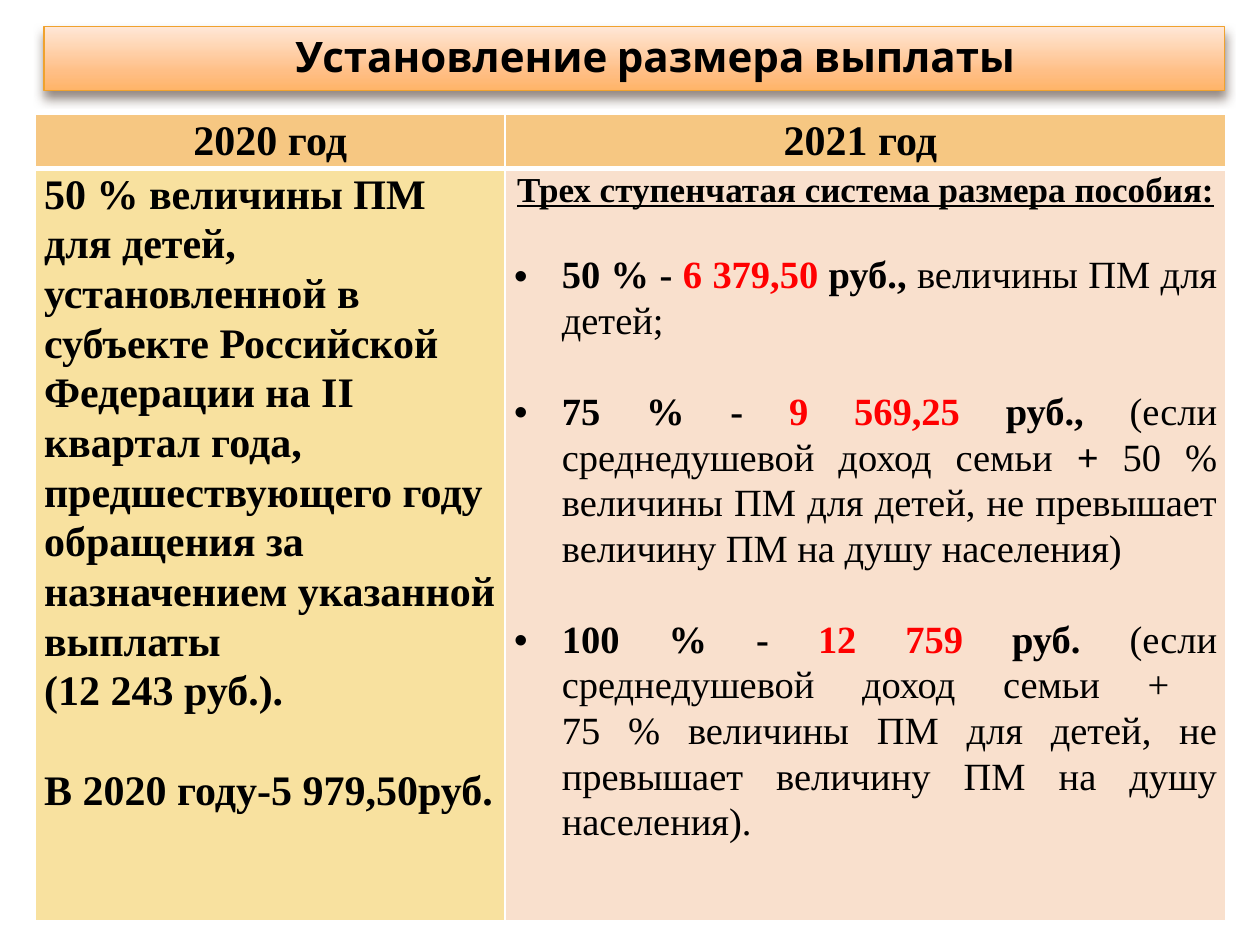
from lxml import etree
from pptx import Presentation
from pptx.dml.color import RGBColor
from pptx.enum.shapes import MSO_SHAPE
from pptx.enum.text import MSO_ANCHOR, PP_ALIGN
from pptx.oxml import parse_xml
from pptx.oxml.ns import nsdecls, qn
from pptx.util import Inches, Pt

RECTANGLE = MSO_SHAPE.RECTANGLE
MIDDLE = MSO_ANCHOR.MIDDLE
LEFT, CENTER, JUSTIFY = PP_ALIGN.LEFT, PP_ALIGN.CENTER, PP_ALIGN.JUSTIFY
BLACK, RED = "000000", "FF0000"


def color(value):
    return RGBColor.from_string(value)


def write(paragraph, runs, size, align, gap=0):
    paragraph.alignment = align
    paragraph.line_spacing = 1.07
    paragraph.space_before = Pt(gap)
    paragraph.font.name = "Times New Roman"
    paragraph.font.size = Pt(size)
    for text, bold, run_color in runs:
        for index, line in enumerate(text.split("\n")):
            if index:
                paragraph.add_line_break()
            run = paragraph.add_run()
            run.text = line
            run.font.name = "Times New Roman"
            run.font.size = Pt(size)
            run.font.bold = bold
            run.font.color.rgb = color(run_color)


presentation = Presentation()
presentation.slide_width = Inches(10)
presentation.slide_height = Inches(7.5)
slide = presentation.slides.add_slide(presentation.slide_layouts[6])

banner_box = (Inches(0.35), Inches(0.21), Inches(9.37), Inches(0.51))
banner = slide.shapes.add_shape(RECTANGLE, *banner_box)
banner.line.color.rgb = color("F0A22E")
banner.line.width = Pt(0.79)
stops = "".join(
    f'<a:gs pos="{position * 1000}"><a:srgbClr val="{value}"/></a:gs>'
    for position, value in [(0, "FFE7D7"), (72, "FFBE84"), (100, "FFB468")]
)
banner_properties = banner._element.spPr
banner_properties.find(qn("a:prstGeom")).addnext(parse_xml(
    f'<a:gradFill {nsdecls("a")} rotWithShape="1"><a:gsLst>{stops}</a:gsLst>'
    '<a:lin ang="5400000" scaled="0"/></a:gradFill>'
))
banner_properties.append(parse_xml(
    f'<a:effectLst {nsdecls("a")}><a:outerShdw blurRad="{Pt(6)}" dist="{Pt(4)}" '
    'dir="5400000" rotWithShape="0"><a:srgbClr val="4E3B30"><a:alpha val="60000"/>'
    '</a:srgbClr></a:outerShdw></a:effectLst>'
))

title = slide.shapes.add_textbox(*banner_box)
frame = title.text_frame
frame.word_wrap = True
frame.vertical_anchor = MIDDLE
frame.margin_left = Inches(0.4)
frame.margin_right = frame.margin_top = frame.margin_bottom = Inches(0.07)
paragraph = frame.paragraphs[0]
paragraph.text = "Установление размера выплаты"
paragraph.alignment = CENTER
paragraph.line_spacing = 0.9
paragraph.font.name = "Cabin"
paragraph.font.size = Pt(24)
paragraph.font.bold = True
paragraph.font.color.rgb = color(BLACK)

table = slide.shapes.add_table(
    2, 2, Inches(0.28), Inches(0.91), Inches(9.45), Inches(6.39)
).table
for column, width in zip(table.columns, [3.73, 5.72]):
    column.width = Inches(width)
for row, height in zip(table.rows, [0.42, 5.97]):
    row.height = Inches(height)

fills = [["F6C782", "F6C782"], ["F8E19F", "F9E0CD"]]
for row_index, row_fills in enumerate(fills):
    for column_index, fill in enumerate(row_fills):
        cell = table.cell(row_index, column_index)
        cell.margin_left = cell.margin_right = Inches(0.07)
        cell.margin_top = cell.margin_bottom = 0
        cell_properties = cell._tc.get_or_add_tcPr()
        for side in ["L", "R", "T", "B"]:
            header_edge = (row_index, side) in [(0, "B"), (1, "T")]
            border = etree.SubElement(cell_properties, qn(f"a:ln{side}"))
            border.set("w", str(Pt(3 if header_edge else 1)))
            border_fill = etree.SubElement(border, qn("a:solidFill"))
            etree.SubElement(border_fill, qn("a:srgbClr")).set("val", "FFFFFF")
        cell.fill.solid()
        cell.fill.fore_color.rgb = color(fill)

for column_index, heading in enumerate(["2020 год", "2021 год "]):
    paragraph = table.cell(0, column_index).text_frame.paragraphs[0]
    write(paragraph, [(heading, True, BLACK)], 24, CENTER)

old_rule = [
    ("50 % величины ПМ для детей, установленной в субъекте Российской Федерации "
     "на II квартал года, предшествующего году обращения за назначением указанной выплаты", 0),
    ("(12 243 руб.).", 0),
    ("В 2020 году-5 979,50руб.", 28.4),
]
old_frame = table.cell(1, 0).text_frame
for index, (text, gap) in enumerate(old_rule):
    paragraph = old_frame.add_paragraph() if index else old_frame.paragraphs[0]
    write(paragraph, [(text, True, BLACK)], 24, LEFT, gap)

new_frame = table.cell(1, 1).text_frame
paragraph = new_frame.paragraphs[0]
write(paragraph, [("Трех ступенчатая система размера пособия:", True, BLACK)], 20, CENTER)
paragraph.runs[0].font.underline = True

steps = [
    ("50 % - ", "6 379,50", " руб., ", [("величины ПМ для детей;", False, BLACK)], 23.7),
    ("75 % - ", "9 569,25 ", "руб., ", [
        ("(если среднедушевой доход семьи ", False, BLACK),
        ("+", True, BLACK),
        (" 50 % величины ПМ для детей, не превышает величину ПМ на душу населения)", False, BLACK),
    ], 26),
    ("100 % - ", "12 759 ", "руб. ", [
        ("(если среднедушевой доход семьи + \n75 % величины ПМ для детей, "
         "не превышает величину ПМ на душу населения).", False, BLACK),
    ], 26),
]
for share, amount, unit, condition, gap in steps:
    paragraph = new_frame.add_paragraph()
    runs = [(share, True, BLACK), (amount, True, RED), (unit, True, BLACK)] + condition
    write(paragraph, runs, 22, JUSTIFY, gap)
    paragraph_properties = paragraph._p.get_or_add_pPr()
    paragraph_properties.set("marL", str(Inches(0.38)))
    paragraph_properties.set("indent", str(-Inches(0.38)))
    spacing = paragraph_properties.find(qn("a:spcBef"))
    spacing.addnext(parse_xml(f'<a:buChar {nsdecls("a")} char="•"/>'))
    spacing.addnext(parse_xml(f'<a:buFont {nsdecls("a")} typeface="Arial"/>'))

presentation.save("out.pptx")
